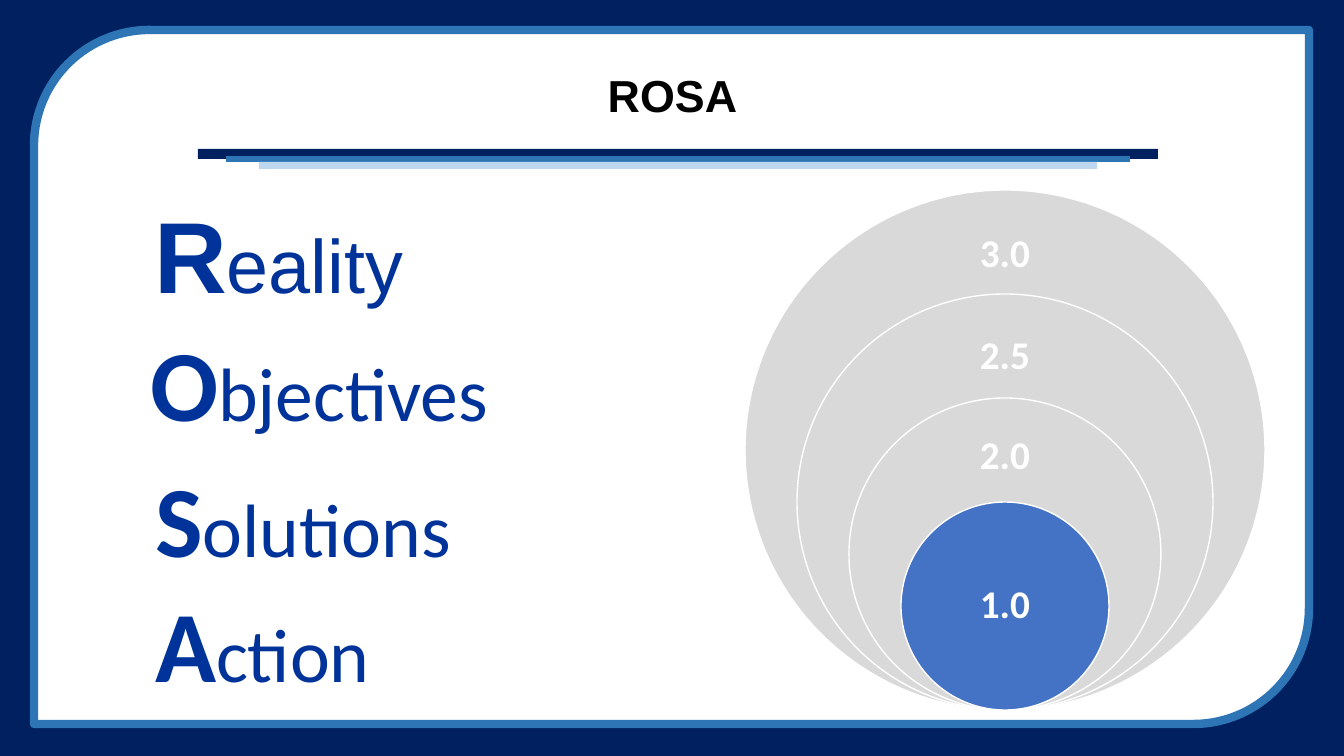
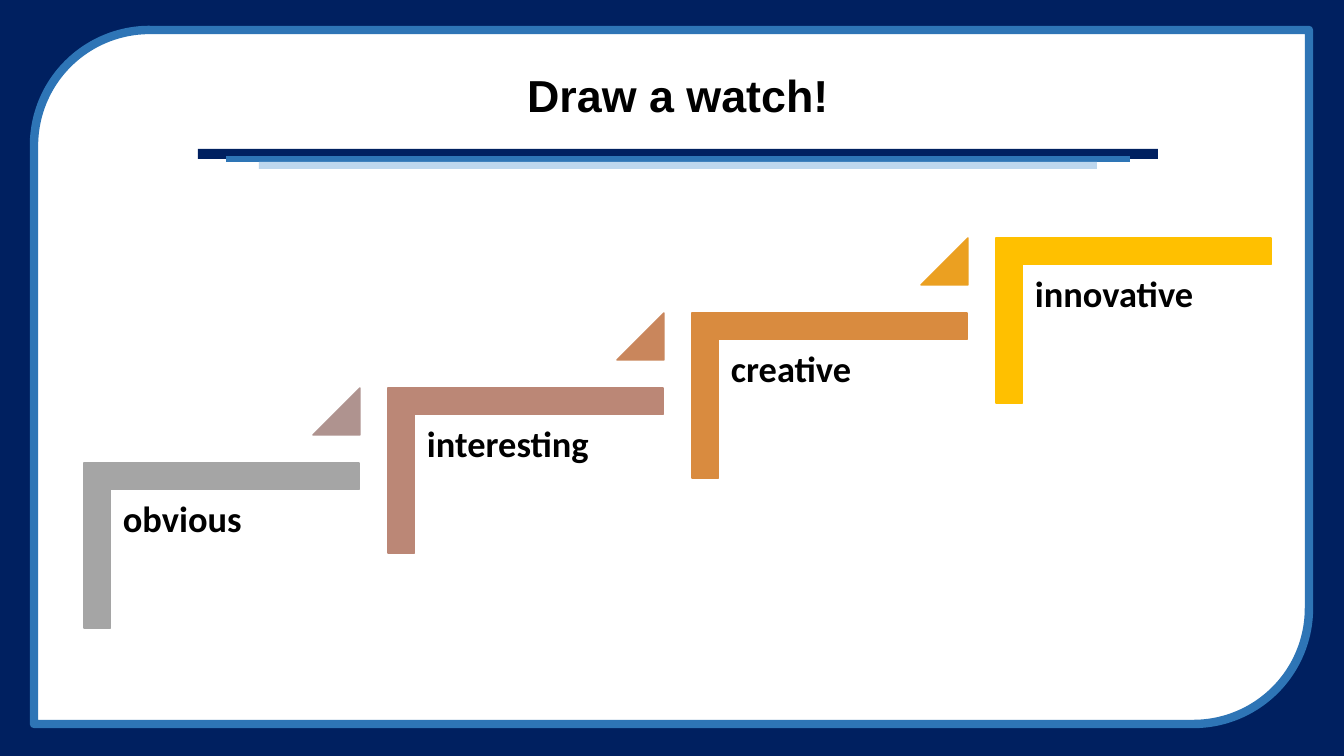
import pptx
import pptx.dml.color
import pptx.enum.shapes
import pptx.enum.text
import pptx.util

PX = 12192000 / 1344
NAVY, BLUE, PALE, WHITE, BLACK = "002060", "2E75B6", "BDD7EE", "FFFFFF", "000000"
LETTER_BLUE, RING_GREY, CORE_BLUE = "003399", "D9D9D9", "4472C4"
color = pptx.dml.color.RGBColor.from_string
kinds = pptx.enum.shapes.MSO_SHAPE
align = pptx.enum.text.PP_ALIGN
anchors = pptx.enum.text.MSO_ANCHOR


def add_block(slide, kind, box, fill, line=None, weight=1):
    block = slide.shapes.add_shape(kind, *[round(v * PX) for v in box])
    block.shadow.inherit = False
    block.fill.solid()
    block.fill.fore_color.rgb = color(fill)
    if line:
        block.line.color.rgb = color(line)
        block.line.width = pptx.util.Pt(weight)
    else:
        block.line.fill.background()
    return block


def write(slide, box, runs, font, ink, centred=False, inset=0):
    frame = slide.shapes.add_textbox(*[round(v * PX) for v in box]).text_frame
    frame.word_wrap = True
    frame.margin_left = frame.margin_right = round(inset * PX)
    frame.margin_top = frame.margin_bottom = round(inset * PX)
    frame.vertical_anchor = anchors.MIDDLE if centred else anchors.TOP
    paragraph = frame.paragraphs[0]
    paragraph.alignment = align.CENTER if centred else align.LEFT
    paragraph.line_spacing = 0.9
    for text, size, bold in runs:
        run = paragraph.add_run()
        run.text = text
        run.font.name = font
        run.font.size = pptx.util.Pt(size)
        run.font.bold = bold
        run.font.color.rgb = color(ink)


deck = pptx.Presentation()
deck.slide_width = round(1344 * PX)
deck.slide_height = round(756 * PX)

slides = []
for title in ("ROSA ", "Draw a watch!"):
    slide = deck.slides.add_slide(deck.slide_layouts[6])
    slide.background.fill.solid()
    slide.background.fill.fore_color.rgb = color(NAVY)
    add_block(slide, kinds.ROUND_2_DIAG_RECTANGLE, (34, 30, 1275, 694), WHITE, BLUE, 6)
    for left, top, width, height, shade in (
        (198, 149, 960, 10, NAVY),
        (226, 156, 904, 6, BLUE),
        (259, 162, 838, 7, PALE),
    ):
        add_block(slide, kinds.RECTANGLE, (left, top, width, height), shade)
    write(slide, (198, 49, 960, 98), [(title, 32, True)], "Arial", BLACK, centred=True)
    slides.append(slide)
rosa, watch = slides

for initial, rest, left, top, font in (
    ("R", "eality", 149, 201, "Arial"),
    ("O", "bjectives", 145, 329, "Calibri"),
    ("S", "olutions", 150, 465, "Calibri"),
    ("A", "ction", 150, 590, "Calibri"),
):
    write(rosa, (left, top, 580, 99), [(initial, 72, True), (rest, 54, False)],
          font, LETTER_BLUE, inset=5)

RING_STEP, RING_CENTRE, RING_BOTTOM = 104, 1005, 710
for steps, score, middle, shade in (
    (5, "3.0", 255, RING_GREY),
    (4, "2.5", 357, RING_GREY),
    (3, "2.0", 457, RING_GREY),
    (2, "1.0", 606, CORE_BLUE),
):
    across = steps * RING_STEP
    add_block(rosa, kinds.OVAL,
              (RING_CENTRE - across / 2, RING_BOTTOM - across, across, across), shade, WHITE)
    write(rosa, (RING_CENTRE - 52, middle - 26, 104, 52), [(score, 28, True)],
          "Calibri", WHITE, centred=True)

STEP_RIGHT, STEP_UP = 304, 75
for index, (level, shade, marker) in enumerate((
    ("obvious", "A5A5A5", "AF938F"),
    ("interesting", "BB8776", "C9865C"),
    ("creative", "D98B3F", "EBA021"),
    ("innovative", "FFC000", None),
)):
    right, up = index * STEP_RIGHT, index * STEP_UP
    stair = add_block(watch, kinds.CORNER, (139 + right, 408 - up, 165, 275), shade, shade)
    stair.rotation = 90
    stair.adjustments[0] = stair.adjustments[1] = 0.16
    write(watch, (112 + right, 490 - up, 249, 218), [(level, 26, True)],
          "Calibri", BLACK, inset=11)
    if marker:
        arrow = add_block(watch, kinds.ISOSCELES_TRIANGLE,
                          (313 + right, 388 - up, 47, 47), marker, marker)
        arrow.adjustments[0] = 1

deck.save("out.pptx")
